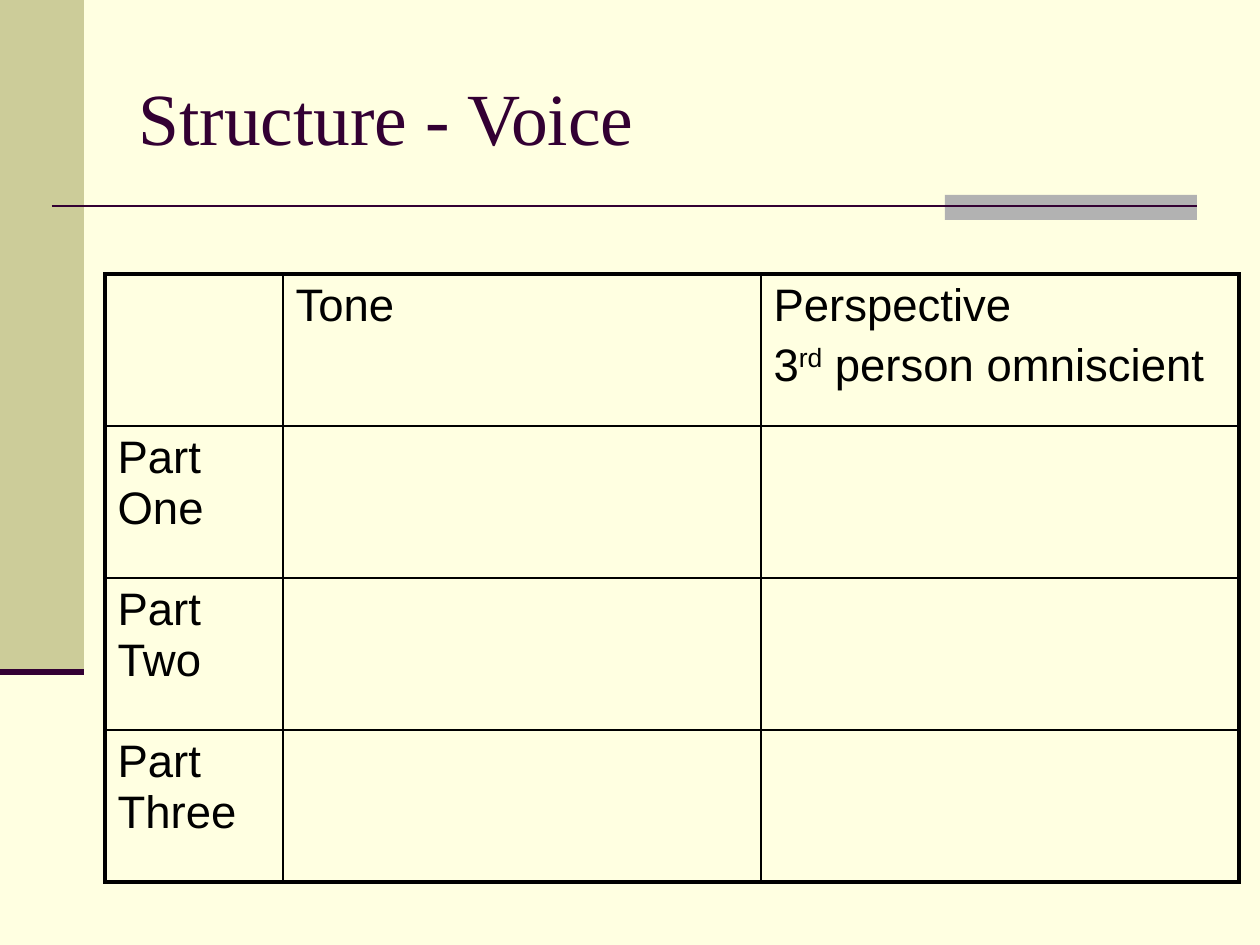
"""Build the "Structure - Voice" slide with its tone and perspective table."""
from lxml import etree
from pptx import Presentation
from pptx.dml.color import RGBColor
from pptx.enum.shapes import MSO_CONNECTOR, MSO_SHAPE
from pptx.enum.text import MSO_ANCHOR
from pptx.oxml.ns import qn
from pptx.util import Pt

PX = 914400 / 126
STRAIGHT = MSO_CONNECTOR.STRAIGHT
RECTANGLE = MSO_SHAPE.RECTANGLE
MIDDLE = MSO_ANCHOR.MIDDLE

CREAM = RGBColor(0xFF, 0xFF, 0xE1)
KHAKI = RGBColor(0xCC, 0xCC, 0x99)
GREY = RGBColor(0xB2, 0xB2, 0xB2)
PLUM = RGBColor(0x33, 0x00, 0x33)
BLACK = RGBColor(0x00, 0x00, 0x00)

TITLE_FORMAT = {"name": "Times New Roman", "size": Pt(42)}
CELL_FORMAT = {"name": "Arial", "size": Pt(26)}


def emu(*lengths):
    return [round(length * PX) for length in lengths]


def add_span(para, text, font_format, color):
    span = para.add_run()
    span.text = text
    for name, value in font_format.items():
        setattr(span.font, name, value)
    span.font.color.rgb = color
    return span


deck = Presentation()
deck.slide_width, deck.slide_height = emu(1260, 945)
page = deck.slides.add_slide(deck.slide_layouts[6])
page.background.fill.solid()
page.background.fill.fore_color.rgb = CREAM

for bounds, color in [((0, 0, 84, 672), KHAKI), ((945, 195, 252, 25), GREY)]:
    bar = page.shapes.add_shape(RECTANGLE, *emu(*bounds))
    bar.shadow.inherit = False
    bar.fill.solid()
    bar.fill.fore_color.rgb = color
    bar.line.fill.background()

for ends, width in [((52, 206, 1197, 206), 1.5), ((0, 672, 84, 672), 3.5)]:
    rule = page.shapes.add_connector(STRAIGHT, *emu(*ends))
    rule.line.color.rgb = PLUM
    rule.line.width = Pt(width)
    etree.SubElement(rule._element.spPr, qn("a:effectLst"))

title = page.shapes.add_textbox(*emu(126, 38, 1071, 157))
title.text_frame.word_wrap = True
title.text_frame.vertical_anchor = MIDDLE
add_span(title.text_frame.paragraphs[0], "Structure - Voice", TITLE_FORMAT, PLUM)

COLUMN_WIDTHS = [178, 478, 478]
ROW_HEIGHTS = [152] * 4
CELL_TEXTS = {
    (0, 1): [["Tone"]],
    (0, 2): [["Perspective"], ["3", "rd", " person omniscient"]],
    (1, 0): [["Part One"]],
    (2, 0): [["Part Two"]],
    (3, 0): [["Part Three"]],
}
last_row, last_column = len(ROW_HEIGHTS) - 1, len(COLUMN_WIDTHS) - 1

frame = page.shapes.add_table(
    len(ROW_HEIGHTS), len(COLUMN_WIDTHS),
    *emu(105, 274, sum(COLUMN_WIDTHS), sum(ROW_HEIGHTS)))
table = frame.table
table.first_row = False
table.horz_banding = False
for column, width in zip(table.columns, emu(*COLUMN_WIDTHS)):
    column.width = width
for row, height in zip(table.rows, emu(*ROW_HEIGHTS)):
    row.height = height

for row_index in range(last_row + 1):
    for column_index in range(last_column + 1):
        cell = table.cell(row_index, column_index)
        properties = cell._tc.get_or_add_tcPr()
        outer_sides = {
            "a:lnL": column_index == 0,
            "a:lnR": column_index == last_column,
            "a:lnT": row_index == 0,
            "a:lnB": row_index == last_row,
        }
        for side, is_outer in outer_sides.items():
            width = Pt(2.25 if is_outer else 1)
            border = etree.SubElement(properties, qn(side), w=str(width))
            fill = etree.SubElement(border, qn("a:solidFill"))
            etree.SubElement(fill, qn("a:srgbClr"), val=str(BLACK))
        cell.fill.background()

        lines = CELL_TEXTS.get((row_index, column_index), [])
        for line_index, texts in enumerate(lines):
            if line_index == 0:
                para = cell.text_frame.paragraphs[0]
            else:
                para = cell.text_frame.add_paragraph()
                para.space_before = Pt(5.2)
            for text in texts:
                span = add_span(para, text, CELL_FORMAT, BLACK)
                if text == "rd":
                    span._r.get_or_add_rPr().set("baseline", "30000")

deck.save("out.pptx")
